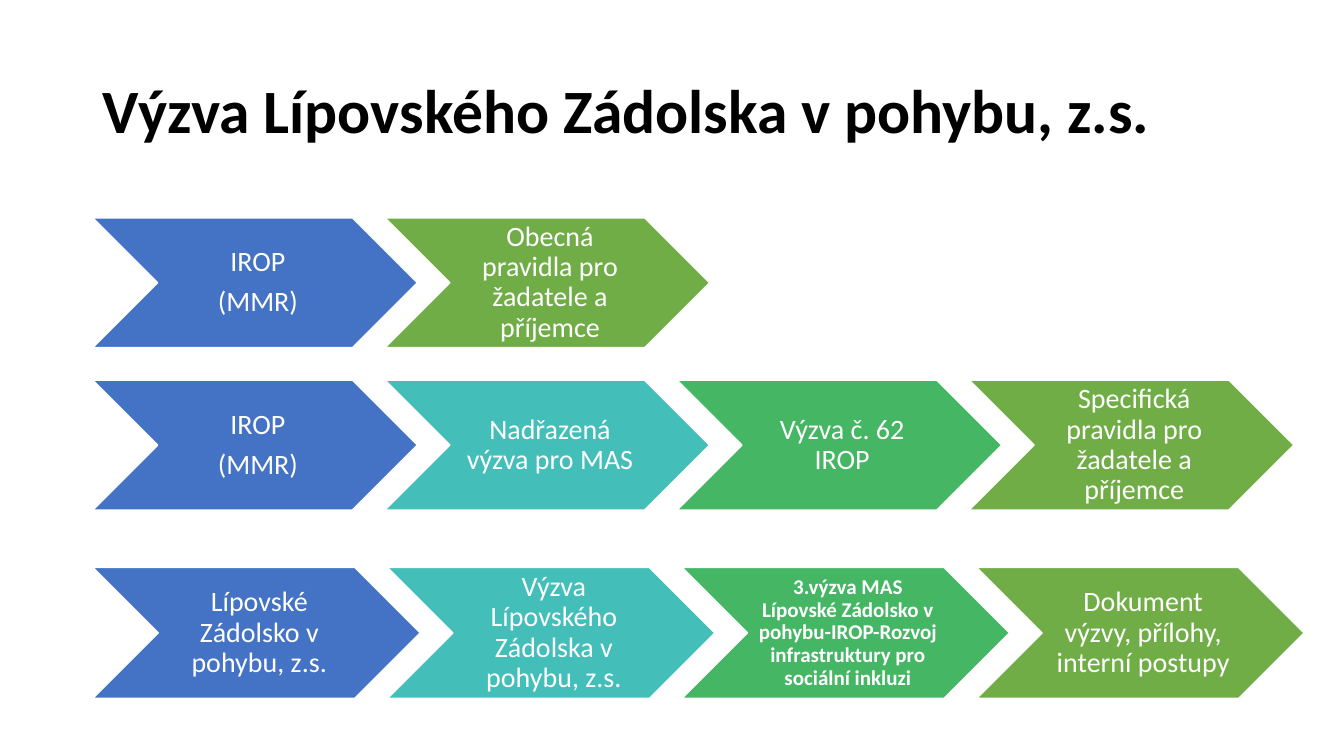
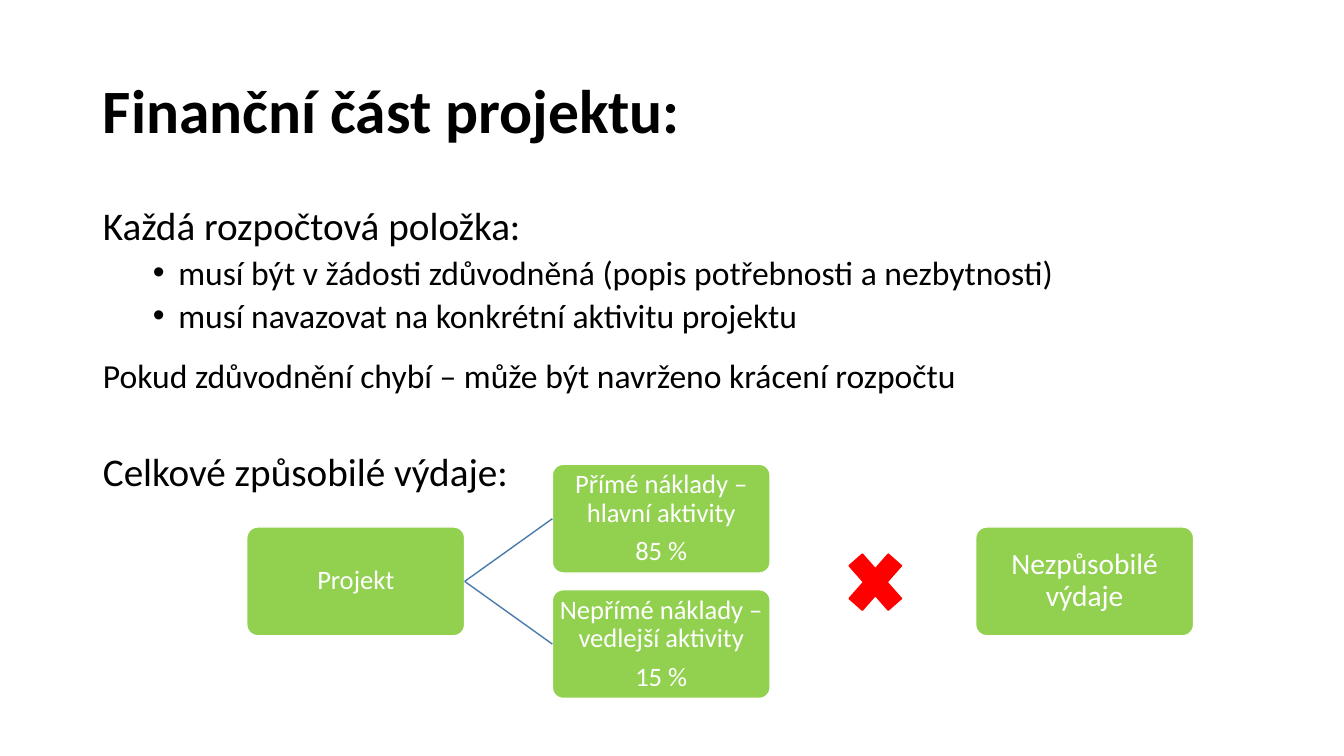
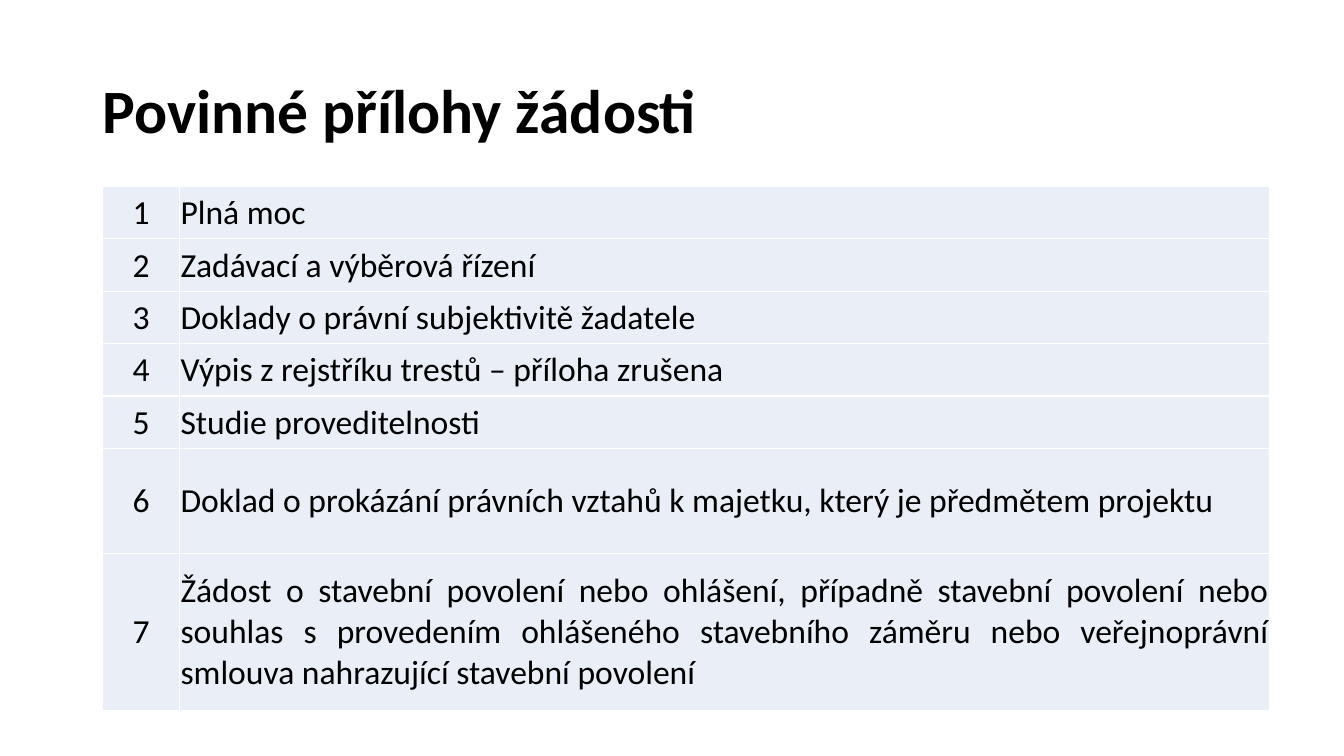
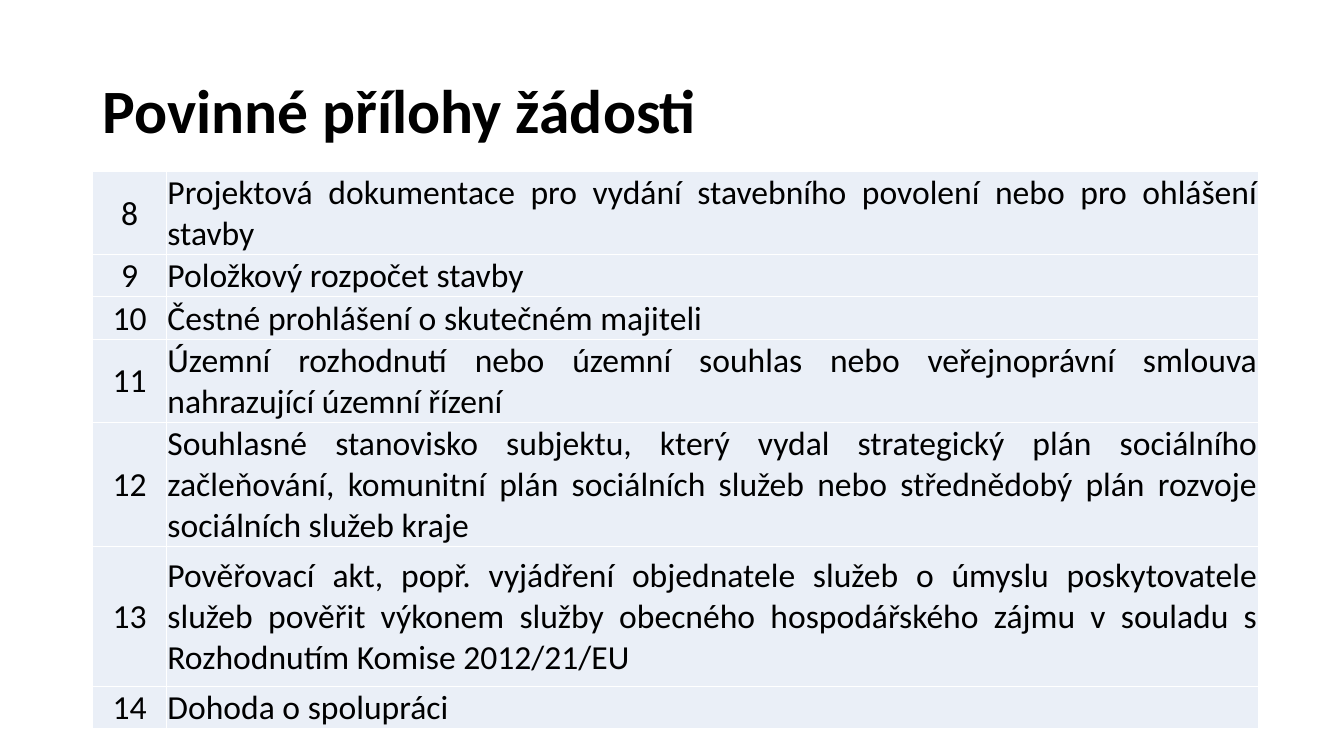
"""Build a four-slide deck on a grant call: documents, budget and attachments."""
from dataclasses import dataclass

from lxml import etree
from pptx import Presentation
from pptx.dml.color import RGBColor
from pptx.enum.shapes import MSO_CONNECTOR, MSO_SHAPE
from pptx.enum.text import MSO_ANCHOR, MSO_AUTO_SIZE, PP_ALIGN
from pptx.oxml.ns import qn
from pptx.util import Cm, Pt

CHEVRON, ROUNDED, CROSS = MSO_SHAPE.CHEVRON, MSO_SHAPE.ROUNDED_RECTANGLE, MSO_SHAPE.MATH_MULTIPLY
STRAIGHT = MSO_CONNECTOR.STRAIGHT
LEFT, CENTER, JUSTIFY = PP_ALIGN.LEFT, PP_ALIGN.CENTER, PP_ALIGN.JUSTIFY
MIDDLE, NO_FIT = MSO_ANCHOR.MIDDLE, MSO_AUTO_SIZE.NONE
TITLE_AND_BODY, TITLE_ONLY = 1, 5
LEFT_SITE, RIGHT_SITE = 1, 3


@dataclass(frozen=True)
class Theme:
    """Colours, font and type sizes of the deck."""
    font: str = "Calibri"
    black: str = "000000"
    white: str = "FFFFFF"
    blue: str = "4472C4"
    teal: str = "43BEB9"
    green: str = "45B664"
    olive: str = "70AD47"
    lime: str = "92D050"
    red: str = "FF0000"
    link: str = "497CAB"
    cell: str = "EAEFF7"
    title: int = 44
    heading: int = 28
    body: int = 24
    result: int = 21
    step: int = 20
    box: int = 19
    small: int = 15
    spacing: float = 0.9


THEME = Theme()
MARGIN = 2.34

CALL_TITLE = "Výzva Lípovského Zádolska v pohybu, z.s."
BUDGET_TITLE = "Finanční část projektu:"
ATTACHMENTS_TITLE = "Povinné přílohy žádosti"

MINISTRY = (THEME.blue, ["IROP", "(MMR)"])
CHEVRON_ROWS = [
    (5.49, 8.18, [
        MINISTRY,
        (THEME.olive, ["Obecná pravidla pro žadatele a příjemce"]),
    ]),
    (9.58, 8.18, [
        MINISTRY,
        (THEME.teal, ["Nadřazená výzva pro MAS"]),
        (THEME.green, ["Výzva č. 62 IROP"]),
        (THEME.olive, ["Specifická pravidla pro žadatele a příjemce"]),
    ]),
    (14.3, 8.25, [
        (THEME.blue, ["Lípovské Zádolsko v pohybu, z.s."]),
        (THEME.teal, ["Výzva Lípovského Zádolska v pohybu, z.s."]),
        (THEME.green, ["3.výzva MAS Lípovské Zádolsko v pohybu-IROP-Rozvoj "
                       "infrastruktury pro sociální inkluzi"], THEME.small, True),
        (THEME.olive, ["Dokument výzvy, přílohy, interní postupy"]),
    ]),
]

BUDGET_LINES = [
    ("Každá rozpočtová položka:", THEME.heading, False, 10, 0),
    ("musí být v žádosti zdůvodněná (popis potřebnosti a nezbytnosti)", THEME.body, True, 5, 0),
    ("musí navazovat na konkrétní aktivitu projektu", THEME.body, True, 5, 12),
    ("Pokud zdůvodnění chybí – může být navrženo krácení rozpočtu", THEME.body, False, 5, 0),
    ("Celkové způsobilé výdaje:", THEME.heading, False, 41, 0),
]
PROJECT = (6.22, 13.28, ["Projekt"], THEME.box)
COSTS = [
    (13.92, 11.7, ["Přímé náklady – hlavní aktivity", "85 %"], THEME.box),
    (13.92, 14.86, ["Nepřímé náklady – vedlejší aktivity", "15 %"], THEME.box),
]
INELIGIBLE = (24.59, 13.28, ["Nezpůsobilé výdaje"], THEME.result)

ATTACHMENT_TABLES = [
    (1, 2.59, 4.7, (1.93, 27.48), [
        ("Plná moc", 1.32),
        ("Zadávací a výběrová řízení", 1.32),
        ("Doklady o právní subjektivitě žadatele", 1.32),
        ("Výpis z rejstříku trestů – příloha zrušena", 1.32),
        ("Studie proveditelnosti", 1.32),
        ("Doklad o prokázání právních vztahů k majetku, který je předmětem projektu", 2.64),
        ("Žádost o stavební povolení nebo ohlášení, případně stavební povolení nebo souhlas "
         "s provedením ohlášeného stavebního záměru nebo veřejnoprávní smlouva nahrazující "
         "stavební povolení", 3.96),
    ]),
    (8, MARGIN, 4.32, (1.85, 27.53), [
        ("Projektová dokumentace pro vydání stavebního povolení nebo pro ohlášení stavby", 1.98),
        ("Položkový rozpočet stavby", 1.02),
        ("Čestné prohlášení o skutečném majiteli", 1.02),
        ("Územní rozhodnutí nebo územní souhlas nebo veřejnoprávní smlouva nahrazující "
         "územní řízení", 1.98),
        ("Souhlasné stanovisko subjektu, který vydal strategický plán sociálního začleňování, "
         "komunitní plán sociálních služeb nebo střednědobý plán rozvoje sociálních služeb "
         "kraje", 2.97),
        ("Pověřovací akt, popř. vyjádření objednatele služeb o úmyslu poskytovatele služeb "
         "pověřit výkonem služby obecného hospodářského zájmu v souladu s Rozhodnutím Komise "
         "2012/21/EU", 3.53),
        ("Dohoda o spolupráci", 1.02),
    ]),
]


def rgb(color):
    return RGBColor.from_string(color)


def place(shape, left, top, width, height):
    shape.left, shape.top, shape.width, shape.height = map(Cm, (left, top, width, height))


def add_span(para, text, size, color=THEME.black, bold=False):
    span = para.add_run()
    span.text = text
    font = span.font
    font.name, font.size, font.bold = THEME.font, Pt(size), bold
    font.color.rgb = rgb(color)


def next_para(frame, index):
    return frame.add_paragraph() if index else frame.paragraphs[0]


def set_margins(target, left, top, right, bottom):
    target.margin_left, target.margin_top = Cm(left), Cm(top)
    target.margin_right, target.margin_bottom = Cm(right), Cm(bottom)


def add_page(deck, layout, title):
    page = deck.slides.add_slide(deck.slide_layouts[layout])
    box = page.shapes.title
    place(box, MARGIN, 1.02, 29.21, 3.68)
    frame = box.text_frame
    frame.auto_size, frame.vertical_anchor = NO_FIT, MIDDLE
    para = frame.paragraphs[0]
    para.alignment, para.line_spacing = LEFT, THEME.spacing
    add_span(para, title, THEME.title, bold=True)
    return page


def add_figure(page, kind, at, fill, line):
    shape = page.shapes.add_shape(kind, *map(Cm, at))
    shape.shadow.inherit = False
    shape.fill.solid()
    shape.fill.fore_color.rgb = rgb(fill)
    shape.line.color.rgb = rgb(line)
    shape.line.width = Pt(1)
    return shape


def add_label(shape, lines, size, margins, bold=False):
    frame = shape.text_frame
    frame.word_wrap, frame.vertical_anchor = True, MIDDLE
    set_margins(frame, *margins)
    for index, line in enumerate(lines):
        para = next_para(frame, index)
        para.alignment, para.line_spacing = CENTER, THEME.spacing
        para.space_after = Pt(round(size * 0.35))
        add_span(para, line, size, THEME.white, bold)


def add_chevron(page, left, top, width, fill, lines, size=THEME.step, bold=False):
    shape = add_figure(page, CHEVRON, (left, top, width, width * 0.4), fill, THEME.white)
    edge = size * 0.004
    add_label(shape, lines, size, (size * 0.011, edge, edge, edge), bold)


def add_cost_box(page, left, top, lines, size):
    shape = add_figure(page, ROUNDED, (left, top, 5.49, 2.74), THEME.lime, THEME.white)
    shape.adjustments[0] = 0.1
    add_label(shape, lines, size, (0.03,) * 4)
    return shape


def link(page, source, target):
    line = page.shapes.add_connector(STRAIGHT, 0, 0, 0, 0)
    line.begin_connect(source, RIGHT_SITE)
    line.end_connect(target, LEFT_SITE)
    line.line.color.rgb = rgb(THEME.link)
    line.line.width = Pt(1)
    etree.SubElement(line.element.spPr, qn("a:effectLst"))


def set_bullet(para, bulleted):
    props = para._p.get_or_add_pPr()
    props.set("marL", str(Cm(1.9) if bulleted else 0))
    props.set("indent", str(Cm(-0.64) if bulleted else 0))
    if bulleted:
        etree.SubElement(props, qn("a:buFont"), typeface="Arial")
        etree.SubElement(props, qn("a:buChar"), char="•")
    else:
        etree.SubElement(props, qn("a:buNone"))


def fill_body(box):
    place(box, MARGIN, 5.08, 29.21, 12.09)
    frame = box.text_frame
    frame.auto_size = NO_FIT
    for index, (text, size, bulleted, before, after) in enumerate(BUDGET_LINES):
        para = next_para(frame, index)
        para.level = int(bulleted)
        para.line_spacing = THEME.spacing
        para.space_before, para.space_after = Pt(before), Pt(after)
        set_bullet(para, bulleted)
        add_span(para, text, size)


def set_borders(cell):
    props = cell._tc.get_or_add_tcPr()
    for index, side in enumerate(("lnL", "lnR", "lnT", "lnB")):
        border = etree.Element(qn(f"a:{side}"), w=str(Pt(1)))
        fill = etree.SubElement(border, qn("a:solidFill"))
        etree.SubElement(fill, qn("a:srgbClr"), val=THEME.white)
        props.insert(index, border)


def fill_cell(cell, text, alignment):
    cell.fill.solid()
    cell.fill.fore_color.rgb = rgb(THEME.cell)
    cell.vertical_anchor = MIDDLE
    set_margins(cell, 0.03, 0.03, 0.03, 0)
    set_borders(cell)
    para = cell.text_frame.paragraphs[0]
    para.alignment = alignment
    add_span(para, text, THEME.body)


def add_attachments(page, first, left, top, widths, items):
    height = sum(row_height for _, row_height in items)
    table = page.shapes.add_table(len(items), len(widths), Cm(left), Cm(top),
                                  Cm(sum(widths)), Cm(height)).table
    table.first_row = table.horz_banding = False
    for column, width in zip(table.columns, widths):
        column.width = Cm(width)
    for index, (text, row_height) in enumerate(items):
        table.rows[index].height = Cm(row_height)
        fill_cell(table.cell(index, 0), str(first + index), CENTER)
        fill_cell(table.cell(index, 1), text, JUSTIFY)


def build_call(deck):
    page = add_page(deck, TITLE_ONLY, CALL_TITLE)
    for top, width, steps in CHEVRON_ROWS:
        for index, step in enumerate(steps):
            add_chevron(page, MARGIN + index * width * 0.9, top, width, *step)


def build_budget(deck):
    page = add_page(deck, TITLE_AND_BODY, BUDGET_TITLE)
    fill_body(page.placeholders[1])
    project = add_cost_box(page, *PROJECT)
    for cost in COSTS:
        link(page, project, add_cost_box(page, *cost))
    add_cost_box(page, *INELIGIBLE)
    add_figure(page, CROSS, (21.11, 13.59, 1.9, 2.16), THEME.red, THEME.red)


def main():
    deck = Presentation()
    deck.slide_width, deck.slide_height = Cm(33.87), Cm(19.05)
    build_call(deck)
    build_budget(deck)
    for attachments in ATTACHMENT_TABLES:
        add_attachments(add_page(deck, TITLE_ONLY, ATTACHMENTS_TITLE), *attachments)
    deck.save("out.pptx")


if __name__ == "__main__":
    main()
